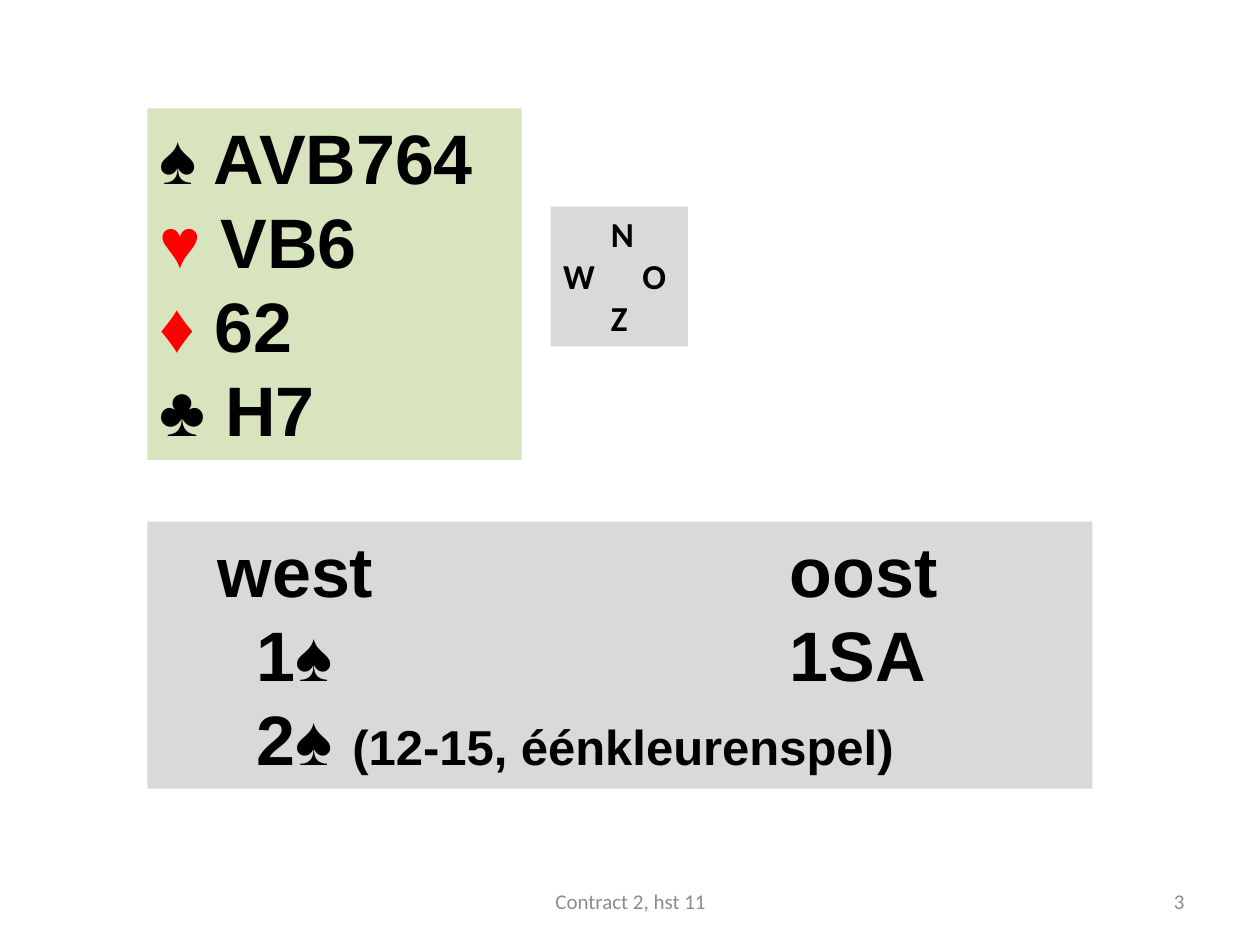
from dataclasses import dataclass

from lxml import etree
from pptx import Presentation
from pptx import util as u
from pptx.dml.color import RGBColor
from pptx.enum import shapes, text
from pptx.oxml.ns import qn


@dataclass(frozen=True)
class Theme:
    hand_fill: str = "D7E4BD"
    panel_fill: str = "D9D9D9"
    black: str = "000000"
    red: str = "FF0000"
    grey: str = "8C8C8C"
    card_font: str = "Arial"
    label_font: str = "Calibri"
    card_size: int = 40
    note_size: int = 28
    compass_size: int = 20
    footer_size: int = 12


class BridgeSlide:
    def __init__(self, slide, theme):
        self.slide = slide
        self.theme = theme

    def add_run(self, p, words, font, size, color, bold=True):
        r = p.add_run()
        r.text = words
        r.font.name = font
        r.font.size = u.Pt(size)
        r.font.bold = bold
        r.font.color.rgb = RGBColor.from_string(color)

    def set_tabs(self, p, stops):
        tabs = etree.SubElement(p._p.get_or_add_pPr(), qn("a:tabLst"))
        for stop in stops:
            etree.SubElement(tabs, qn("a:tab"), pos=str(u.Inches(stop)), algn="l")

    def panel(self, box, fill, font, size, lines):
        """Each line is (tab stops, runs); a run is (words, color[, size])."""
        sp = self.slide.shapes.add_shape(
            shapes.MSO_SHAPE.RECTANGLE, *map(u.Inches, box))
        sp.shadow.inherit = False
        sp.fill.solid()
        sp.fill.fore_color.rgb = RGBColor.from_string(fill)
        sp.line.fill.background()
        tf = sp.text_frame
        tf.word_wrap = True
        tf.auto_size = text.MSO_AUTO_SIZE.SHAPE_TO_FIT_TEXT
        tf.vertical_anchor = text.MSO_ANCHOR.TOP
        for i, (stops, runs) in enumerate(lines):
            p = tf.add_paragraph() if i else tf.paragraphs[0]
            p.alignment = text.PP_ALIGN.LEFT
            if stops:
                self.set_tabs(p, stops)
            for words, color, *own_size in runs:
                self.add_run(p, words, font, own_size[0] if own_size else size, color)

    def footer(self, box, words, align):
        t = self.theme
        tf = self.slide.shapes.add_textbox(*map(u.Inches, box)).text_frame
        tf.word_wrap = True
        tf.vertical_anchor = text.MSO_ANCHOR.MIDDLE
        p = tf.paragraphs[0]
        p.alignment = align
        self.add_run(p, words, t.label_font, t.footer_size, t.grey, bold=False)


def main():
    prs = Presentation()
    prs.slide_width, prs.slide_height = u.Inches(10), u.Inches(7.5)
    t = Theme()
    s = BridgeSlide(prs.slides.add_slide(prs.slide_layouts[6]), t)

    # Hand of cards, one suit per line
    hand = [("♠", t.black, "AVB764"), ("♥", t.red, "VB6"),
            ("♦", t.red, "62"), ("♣", t.black, "H7")]
    s.panel((1.17, 0.86, 2.97, 2.79), t.hand_fill, t.card_font, t.card_size,
            [((), [(suit, color), (f" {cards}", t.black)])
             for suit, color, cards in hand])

    # Compass
    middle, east = 0.38, 0.63
    s.panel((4.37, 1.64, 1.09, 1.11), t.panel_fill, t.label_font, t.compass_size,
            [((middle,), [("\tN", t.black)]),
             ((east,), [("W\tO", t.black)]),
             ((middle,), [("\tZ", t.black)])])

    # Bidding
    head, bid, reply = 0.46, 0.77, 5
    s.panel((1.17, 4.14, 7.5, 2.12), t.panel_fill, t.card_font, t.card_size,
            [((head, reply), [("\twest\toost", t.black)]),
             ((bid, reply), [("\t1♠\t1SA", t.black)]),
             ((bid,), [("\t2♠ ", t.black),
                       ("(12-15, éénkleurenspel)", t.black, t.note_size)])])

    # Footer and slide number
    s.footer((7.17, 6.95, 2.33, 0.4), "3", text.PP_ALIGN.RIGHT)
    s.footer((3.42, 6.95, 3.17, 0.4), "Contract 2, hst 11", text.PP_ALIGN.CENTER)

    prs.save("out.pptx")


if __name__ == "__main__":
    main()
